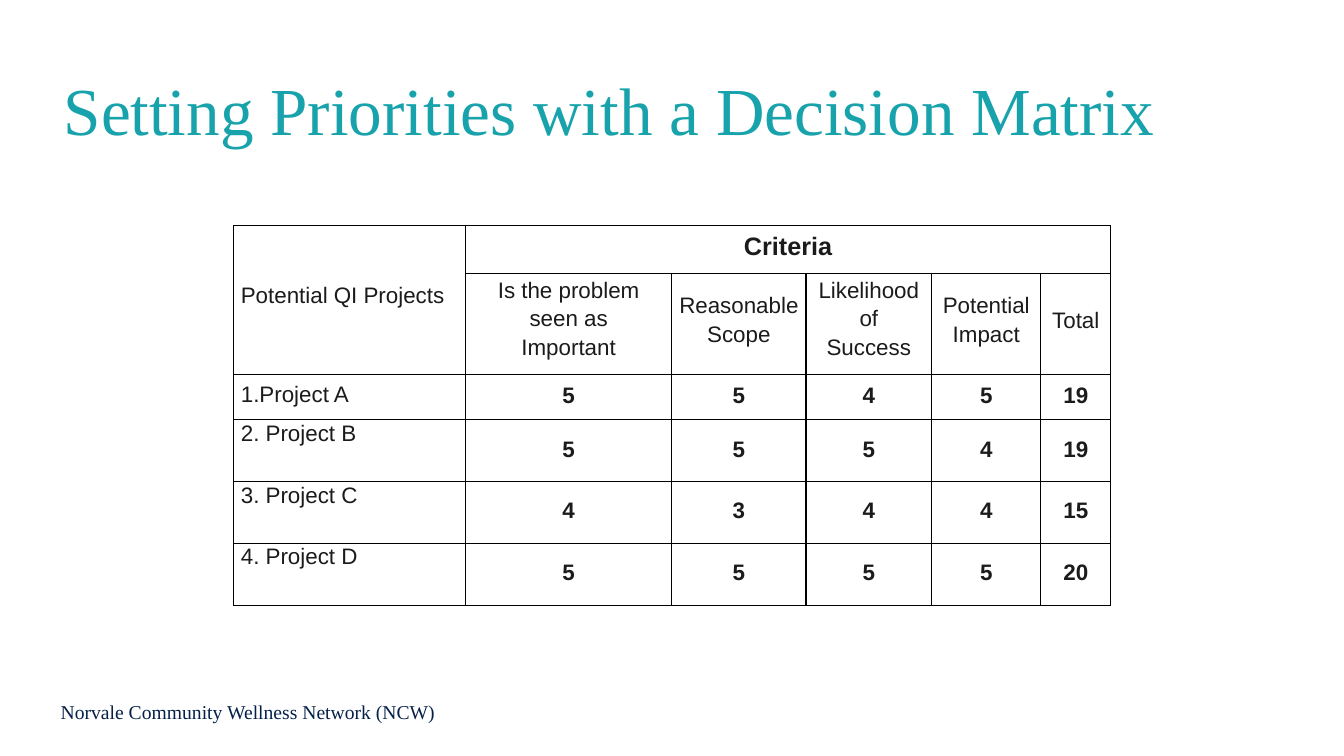
from lxml import etree
from pptx import Presentation
from pptx.dml.color import RGBColor
from pptx.enum import text as t
from pptx.oxml import ns
from pptx.util import Cm, Pt

TEAL = RGBColor(0x18, 0xA3, 0xAC)
NAVY = RGBColor(0x05, 0x20, 0x49)
INK = RGBColor(0x1B, 0x1B, 0x1B)
LINE = "000000"
SERIF, SANS = "Times New Roman", "Arial"


def style(para, name, size, color, bold=False):
    font = para.font
    font.name, font.size, font.bold = name, Pt(size), bold
    font.color.rgb = color


def fill_cell(cell, words, top, side=0, size=16, bold=False, mid=True, lead=1.0):
    """Write text in a cell, with its top and side margins in cm."""
    cell.margin_top, cell.margin_bottom = Cm(top), 0
    cell.margin_left = Cm(side)
    cell.margin_right = Cm(side if mid else 0)
    cell.text = words
    for i, para in enumerate(cell.text_frame.paragraphs):
        style(para, SANS, size, INK, bold)
        para.alignment = t.PP_ALIGN.CENTER if mid else t.PP_ALIGN.LEFT
        para.line_spacing = lead
        para.space_before = Pt(2.9 if i else 0)


prs = Presentation()
prs.slide_width, prs.slide_height = Cm(33.87), Cm(19.05)
slide = prs.slides.add_slide(prs.slide_layouts[5])

# Title
title = slide.shapes.title
title.left, title.top = Cm(1.35), Cm(1.02)
title.width, title.height = Cm(31.62), Cm(3.68)
frame = title.text_frame
frame.text = "Setting Priorities with a Decision Matrix"
frame.auto_size = t.MSO_AUTO_SIZE.NONE
frame.vertical_anchor = t.MSO_ANCHOR.MIDDLE
head = frame.paragraphs[0]
head.alignment = t.PP_ALIGN.LEFT
head.line_spacing = 0.9
style(head, SERIF, 48, TEAL)

# Footer
foot = slide.shapes.add_textbox(Cm(1.28), Cm(17.5), Cm(13.49), Cm(0.86))
foot.text_frame.word_wrap = True
foot.text_frame.text = "Norvale Community Wellness Network (NCW)"
style(foot.text_frame.paragraphs[0], SERIF, 14, NAVY)

# Decision matrix
widths = [5.84, 5.2, 3.38, 3.17, 2.75, 1.76]
heights = [1.2, 2.54, 1.15, 1.56, 1.56, 1.56]
table = slide.shapes.add_table(
    len(heights), len(widths), Cm(5.89), Cm(5.69), Cm(sum(widths)), Cm(sum(heights))
).table
table.first_row = table.horz_banding = False
for col, width in zip(table.columns, widths):
    col.width = Cm(width)
for row, height in zip(table.rows, heights):
    row.height = Cm(height)

for cell in table.iter_cells():
    props = cell._tc.get_or_add_tcPr()
    for side in ("lnL", "lnR", "lnT", "lnB"):
        line = etree.SubElement(props, ns.qn("a:" + side), w=str(Pt(1)))
        solid = etree.SubElement(line, ns.qn("a:solidFill"))
        etree.SubElement(solid, ns.qn("a:srgbClr"), val=LINE)
    cell.fill.background()

table.cell(0, 0).merge(table.cell(1, 0))
table.cell(0, 1).merge(table.cell(0, 5))
fill_cell(table.cell(0, 0), "Potential QI Projects", 1.45, 0.18, mid=False)
fill_cell(table.cell(0, 1), "Criteria", 0.18, size=18, bold=True)

# Criterion, top margin, side margin, line spacing
criteria = [
    ("Is the problem seen as Important", 0.02, 0.8, 1.15),
    ("Reasonable\nScope", 0.5, 0, 1.0),
    ("Likelihood of Success", 0.02, 0.28, 1.15),
    ("Potential\nImpact", 0.5, 0, 1.0),
    ("Total", 0.88, 0, 1.0),
]
for c, (words, top, side, lead) in enumerate(criteria, 1):
    fill_cell(table.cell(1, c), words, top, side, lead=lead)

projects = [
    ("1.Project A", 5, 5, 4, 5),
    ("2. Project B", 5, 5, 5, 4),
    ("3. Project C", 4, 3, 4, 4),
    ("4. Project D", 5, 5, 5, 5),
]
for r, (name, *scores) in enumerate(projects, 2):
    first = r == 2
    fill_cell(table.cell(r, 0), name, 0.2 if first else 0.03, 0.18, mid=False)
    for c, score in enumerate(scores + [sum(scores)], 1):
        fill_cell(table.cell(r, c), str(score), 0.22 if first else 0.43, bold=True)

prs.save("out.pptx")
